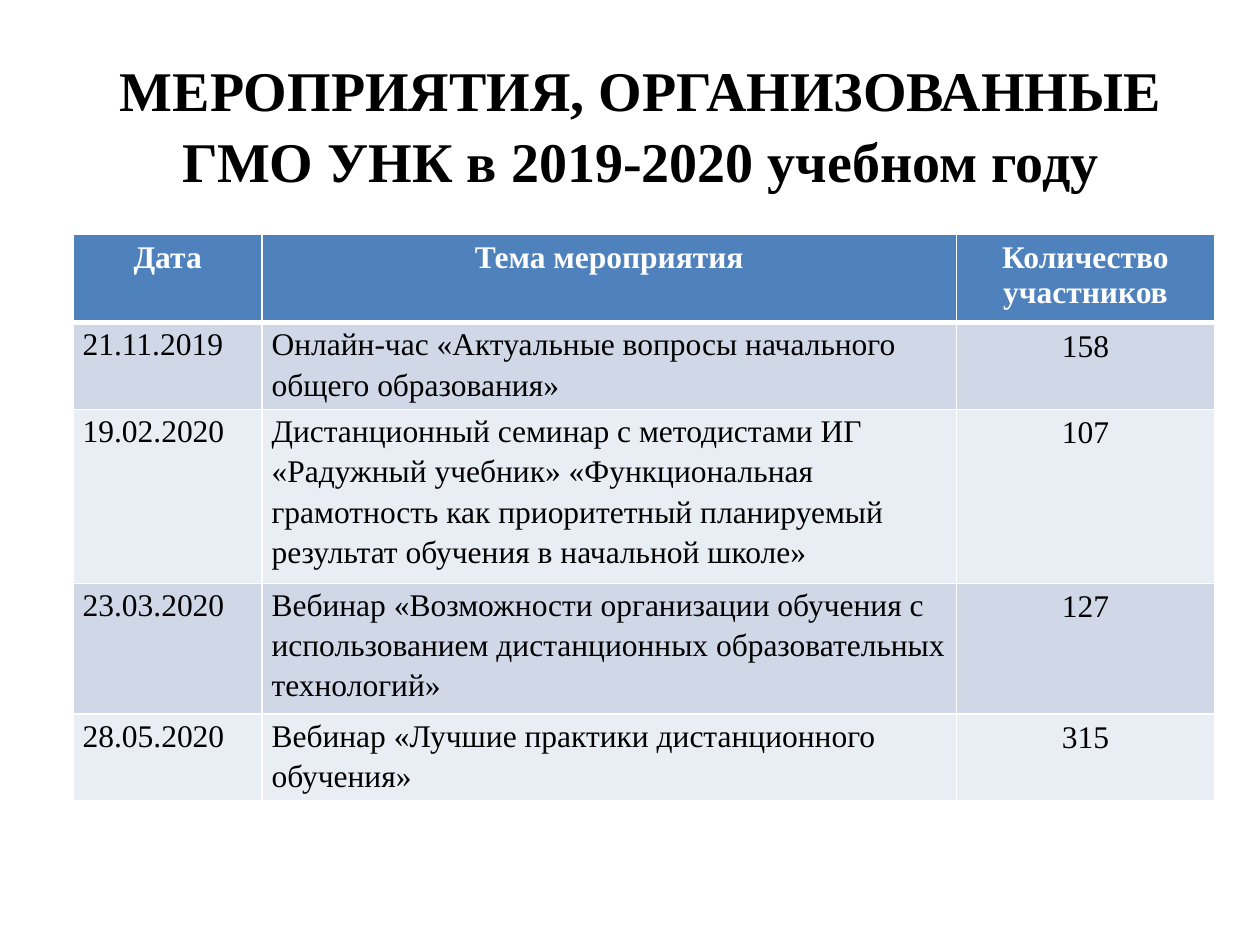
from pptx import Presentation
from pptx.dml.color import RGBColor
from pptx.enum.text import MSO_AUTO_SIZE, PP_ALIGN
from pptx.oxml import parse_xml
from pptx.oxml.ns import nsdecls
from pptx.util import Pt

BLACK = RGBColor(0x00, 0x00, 0x00)
WHITE = RGBColor(0xFF, 0xFF, 0xFF)
HEADER_BLUE = RGBColor(0x4F, 0x81, 0xBD)
BAND_DARK = RGBColor(0xD0, 0xD8, 0xE8)
BAND_LIGHT = RGBColor(0xE9, 0xED, 0xF4)
FONT = "Times New Roman"

EVENTS = [
    ("Дата", "Тема мероприятия", "Количество участников"),
    ("21.11.2019", "Онлайн-час «Актуальные вопросы начального общего образования»", "158"),
    ("19.02.2020", "Дистанционный семинар с методистами ИГ «Радужный учебник» "
     "«Функциональная грамотность как приоритетный планируемый результат "
     "обучения в начальной школе»", "107"),
    ("23.03.2020", "Вебинар «Возможности организации обучения с использованием "
     "дистанционных образовательных технологий»", "127"),
    ("28.05.2020", "Вебинар «Лучшие практики дистанционного обучения»", "315"),
]
COLUMN_WIDTHS = [108, 396.7, 147.6]
ROW_HEIGHTS = [49.7, 49.7, 99.4, 74.5, 49.7]


def style_paragraph(para, size, color, bold):
    para.font.name = FONT
    para.font.size = Pt(size)
    para.font.bold = bold
    para.font.color.rgb = color


def add_border(cell, side, width):
    cell._tc.get_or_add_tcPr().append(parse_xml(
        f'<a:{side} {nsdecls("a")} w="{Pt(width)}"><a:solidFill>'
        f'<a:srgbClr val="{WHITE}"/></a:solidFill></a:{side}>'))


deck = Presentation()
deck.slide_width = Pt(720)
deck.slide_height = Pt(540)
page = deck.slides.add_slide(deck.slide_layouts[6])

title = page.shapes.add_textbox(Pt(43.9), Pt(25.9), Pt(644.4), Pt(85))
title.text_frame.word_wrap = True
title.text_frame.auto_size = MSO_AUTO_SIZE.SHAPE_TO_FIT_TEXT
para = title.text_frame.paragraphs[0]
para.text = "МЕРОПРИЯТИЯ, ОРГАНИЗОВАННЫЕ ГМО УНК в 2019-2020 учебном году"
para.alignment = PP_ALIGN.CENTER
para.line_spacing = 1.06
style_paragraph(para, 32, BLACK, True)

table = page.shapes.add_table(
    len(ROW_HEIGHTS), len(COLUMN_WIDTHS), Pt(41.8), Pt(133.9),
    Pt(sum(COLUMN_WIDTHS)), Pt(sum(ROW_HEIGHTS))).table
for column, width in zip(table.columns, COLUMN_WIDTHS):
    column.width = Pt(width)
for row, height in zip(table.rows, ROW_HEIGHTS):
    row.height = Pt(height)

for row_index, event in enumerate(EVENTS):
    is_header = row_index == 0
    for column_index, text in enumerate(event):
        cell = table.cell(row_index, column_index)
        cell.text = text
        para = cell.text_frame.paragraphs[0]
        style_paragraph(para, 18, WHITE if is_header else BLACK, is_header)
        if is_header or column_index == 2:
            para.alignment = PP_ALIGN.CENTER
        else:
            para.line_spacing = 1.15
            cell.margin_left = cell.margin_right = Pt(5.4)
            cell.margin_top = cell.margin_bottom = Pt(0)
        for side in ("lnL", "lnR", "lnT", "lnB"):
            thick = (row_index, side) in ((0, "lnB"), (1, "lnT"))
            add_border(cell, side, 3 if thick else 1)
        cell.fill.solid()
        cell.fill.fore_color.rgb = (
            HEADER_BLUE if is_header else BAND_DARK if row_index % 2 else BAND_LIGHT)

deck.save("out.pptx")
